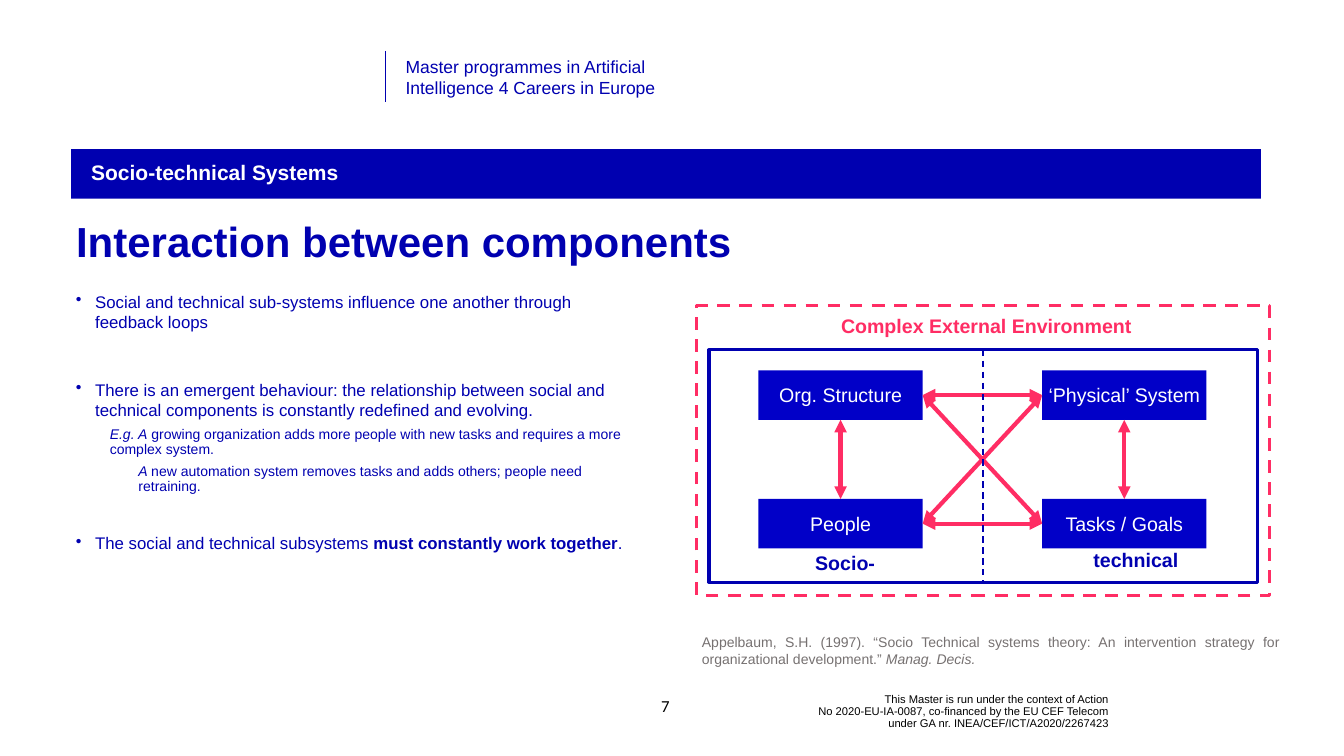
from pptx import Presentation
from pptx import util as u
from pptx.dml.color import RGBColor
from pptx.enum import dml, shapes, text
from pptx.oxml.ns import qn
from lxml import etree

PX = 9144
NAVY = RGBColor(0x00, 0x00, 0xB0)
BLUE = RGBColor(0x01, 0x00, 0xC8)
PINK = RGBColor(0xFF, 0x2D, 0x64)
GREY = RGBColor(0x76, 0x71, 0x71)
WHITE = RGBColor(0xFF, 0xFF, 0xFF)
BLACK = RGBColor(0x00, 0x00, 0x00)
LEFT, CENTER = text.PP_ALIGN.LEFT, text.PP_ALIGN.CENTER
RIGHT, JUST = text.PP_ALIGN.RIGHT, text.PP_ALIGN.JUSTIFY
TOP, MIDDLE = text.MSO_ANCHOR.TOP, text.MSO_ANCHOR.MIDDLE
RECT = shapes.MSO_SHAPE.RECTANGLE
DASH = dml.MSO_LINE.DASH


def say(box, *runs, size=28, color=NAVY, bold=False, font="Arial", align=LEFT,
        anchor=TOP, line=None, before=0, indent=0, bullet=False):
    frame = box.text_frame
    frame.word_wrap = True
    frame.auto_size = text.MSO_AUTO_SIZE.NONE
    frame.vertical_anchor = anchor
    para = frame.paragraphs[0]
    if para.runs:
        para = frame.add_paragraph()
    props = para._p.get_or_add_pPr()
    props.set("marL", str(indent * PX))
    props.set("indent", str(-indent * PX if bullet else 0))
    if bullet:
        etree.SubElement(props, qn("a:buChar")).set("char", "•")
    para.alignment = align
    para.space_before = u.Pt(before)
    if line:
        para.line_spacing = line
    for part in runs:
        words, mark = part if isinstance(part, tuple) else (part, "")
        run = para.add_run()
        run.text = words
        run.font.name = font
        run.font.size = u.Pt(size)
        run.font.color.rgb = color
        run.font.bold = bold or mark == "b"
        run.font.italic = mark == "i"


def link(x1, y1, x2, y2, color, width, arrows=False):
    wire = slide.shapes.add_connector(
        shapes.MSO_CONNECTOR.STRAIGHT, x1 * PX, y1 * PX, x2 * PX, y2 * PX)
    wire.line.color.rgb = color
    wire.line.width = u.Pt(width)
    if arrows:
        ln = wire.line._get_or_add_ln()
        for end in ("a:headEnd", "a:tailEnd"):
            etree.SubElement(ln, qn(end)).set("type", "triangle")
    etree.SubElement(wire._element.spPr, qn("a:effectLst"))
    return wire


deck = Presentation()
deck.slide_width = 2667 * PX
deck.slide_height = 1500 * PX
slide = deck.slides.add_slide(deck.slide_layouts[5])

title = slide.shapes.title
title.left, title.top, title.width, title.height = [n * PX for n in (141, 426, 2361, 124)]
say(title, "Interaction between components", size=60, bold=True, line=u.Pt(70))

labels = [
    ((1502, 1374, 708, 76),
     ["This Master is run under the context of Action",
      "No 2020-EU-IA-0087, co-financed by the EU CEF Telecom",
      "under GA nr. INEA/CEF/ICT/A2020/2267423"],
     dict(size=16, color=BLACK, align=RIGHT, anchor=MIDDLE, line=0.9)),
    ((795, 106, 637, 94),
     ["Master programmes in Artificial", "Intelligence 4 Careers in Europe"],
     dict(size=25)),
    ((1265, 1361, 111, 80), ["7"],
     dict(size=24, color=BLACK, font="Calibri", align=CENTER, anchor=MIDDLE)),
    ((1418, 598, 1078, 98), ["Complex External Environment"],
     dict(color=PINK, bold=True, align=CENTER, anchor=MIDDLE)),
    ((1418, 1067, 518, 98), ["Socio-"],
     dict(bold=True, align=CENTER, anchor=MIDDLE)),
    ((1995, 1062, 518, 98), ["technical"],
     dict(bold=True, align=CENTER, anchor=MIDDLE)),
]
for place, lines, style in labels:
    box = slide.shapes.add_textbox(*[n * PX for n in place])
    for words in lines:
        say(box, words, **style)

link(765, 101, 765, 203, NAVY, 0.5)

banner = slide.shapes.add_shape(RECT, 141 * PX, 296 * PX, 2361 * PX, 98 * PX)
banner.shadow.inherit = False
banner.fill.solid()
banner.fill.fore_color.rgb = NAVY
banner.line.fill.background()
banner.text_frame.margin_left = 40 * PX
say(banner, "Socio-technical Systems", size=30, color=WHITE, bold=True,
    anchor=MIDDLE, line=0.9)

body = slide.shapes.add_textbox(141 * PX, 574 * PX, 1137 * PX, 706 * PX)
point = dict(size=24, indent=38, bullet=True)
note = dict(size=20, line=0.9, before=10)
say(body, "Social and technical sub-systems influence one another through feedback loops",
    **point)
say(body, "There is an emergent behaviour: the relationship between social and "
    "technical components is constantly redefined and evolving.", before=68, **point)
say(body, ("E.g. A", "i"), " growing organization adds more people with new tasks "
    "and requires a more complex system.", indent=67, **note)
say(body, ("A ", "i"), "new automation system removes tasks and adds others; "
    "people need retraining.", indent=124, **note)
say(body, "The social and technical subsystems ",
    ("must constantly work together", "b"), ".", before=55, **point)

source = slide.shapes.add_textbox(1383 * PX, 1253 * PX, 1167 * PX, 130 * PX)
say(source, "Appelbaum, S.H. (1997). “Socio Technical systems theory: An intervention "
    "strategy for organizational development.” ", ("Manag. Decis.", "i"),
    size=20, color=GREY, align=JUST)

WIDE, HIGH = 326, 98
COLS, ROWS = (1505, 2068), (735, 990)
names = [["Org. Structure", "‘Physical’ System"], ["People", "Tasks / Goals"]]
for y, row in zip(ROWS, names):
    for x, name in zip(COLS, row):
        node = slide.shapes.add_shape(RECT, x * PX, y * PX, WIDE * PX, HIGH * PX)
        node.shadow.inherit = False
        node.fill.solid()
        node.fill.fore_color.rgb = BLUE
        node.line.fill.background()
        say(node, name, color=WHITE, align=CENTER, anchor=MIDDLE)

mids = [y + HIGH // 2 for y in ROWS]
for start in mids:
    for end in mids:
        link(COLS[0] + WIDE, start, COLS[1], end, PINK, 6, arrows=True)
for x in COLS:
    mid = x + WIDE // 2
    link(mid, ROWS[0] + HIGH, mid, ROWS[1], PINK, 6, arrows=True)

link(1951, 694, 1951, 1155, NAVY, 2.25).line.dash_style = DASH

frames = [((1407, 694, 1089, 461), NAVY, None), ((1383, 607, 1137, 574), PINK, DASH)]
for place, color, dash in frames:
    edge = slide.shapes.add_shape(RECT, *[n * PX for n in place])
    edge.shadow.inherit = False
    edge.fill.background()
    edge.line.color.rgb = color
    edge.line.width = u.Pt(4.5)
    edge.line.dash_style = dash

deck.save("out.pptx")
